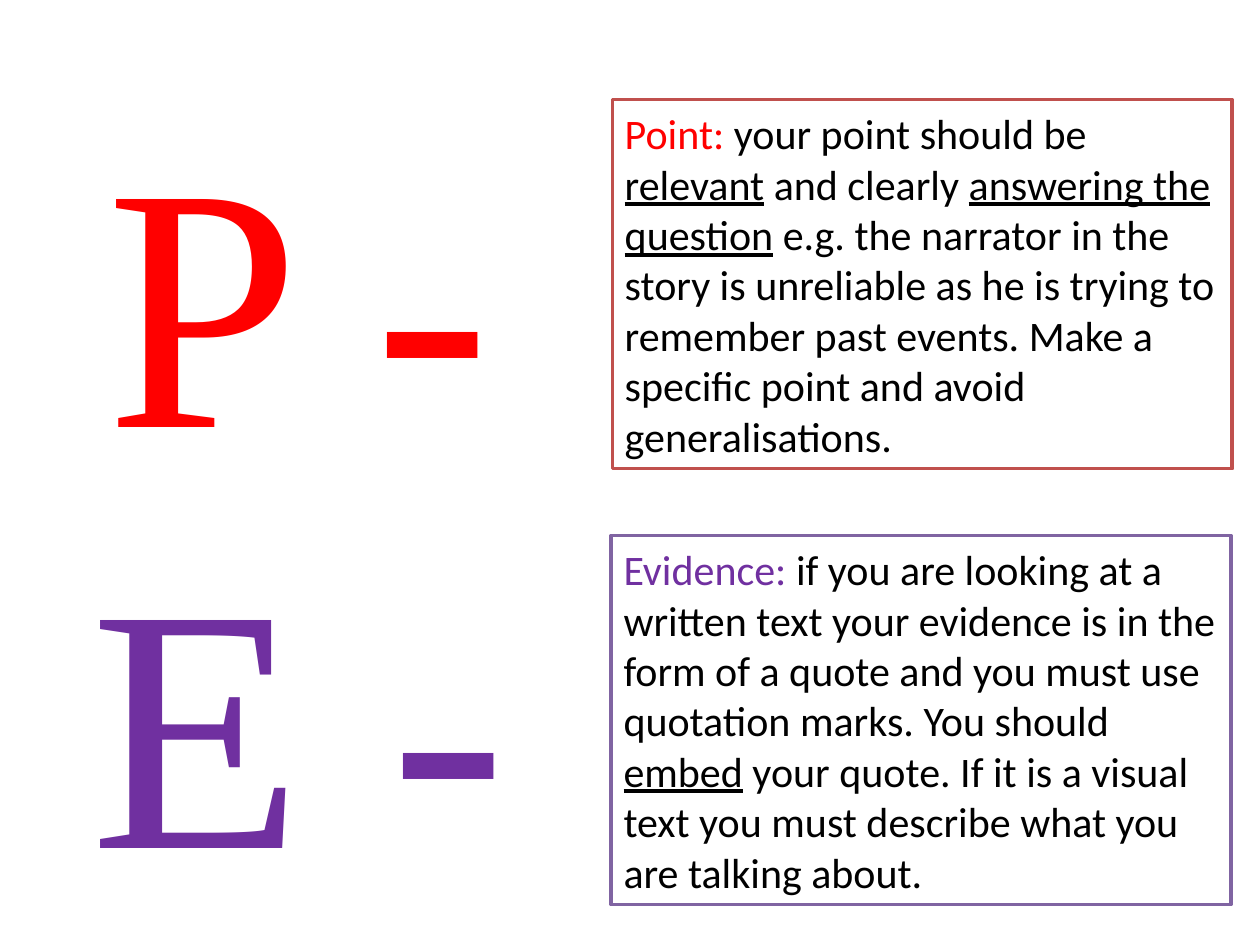
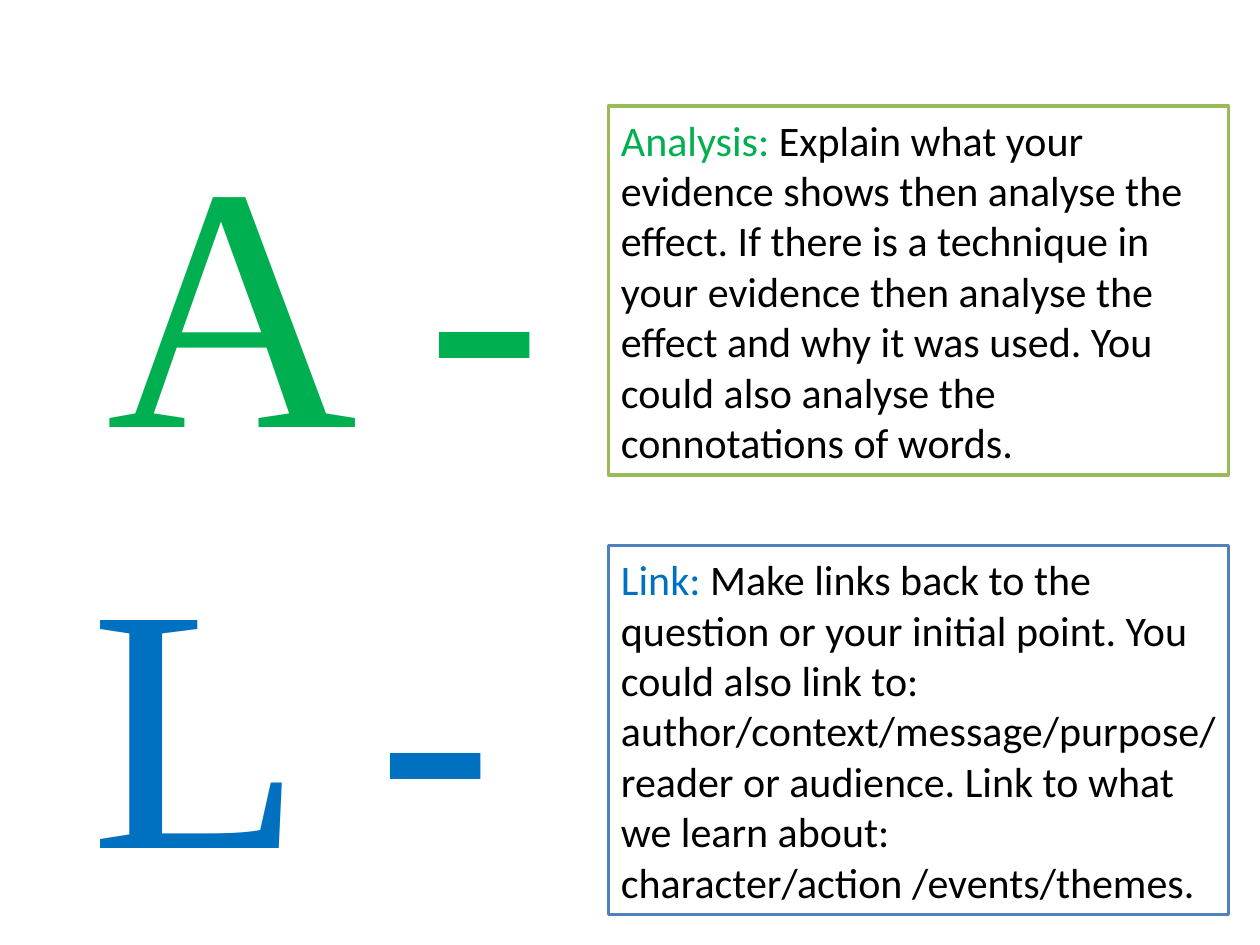
from pptx import Presentation
from pptx.dml.color import RGBColor
from pptx.enum.shapes import MSO_SHAPE
from pptx.enum.text import MSO_ANCHOR, MSO_AUTO_SIZE, PP_ALIGN
from pptx.util import Inches, Pt

RECT = MSO_SHAPE.RECTANGLE
GROW = MSO_AUTO_SIZE.SHAPE_TO_FIT_TEXT
MIDDLE = MSO_ANCHOR.MIDDLE
LEFT = PP_ALIGN.LEFT

BLACK = RGBColor(0x00, 0x00, 0x00)
WHITE = RGBColor(0xFF, 0xFF, 0xFF)
RED = RGBColor(0xFF, 0x00, 0x00)
PURPLE = RGBColor(0x70, 0x30, 0xA0)
GREEN = RGBColor(0x00, 0xB0, 0x50)
BLUE = RGBColor(0x00, 0x70, 0xC0)
RED_EDGE = RGBColor(0xC0, 0x50, 0x4D)
PURPLE_EDGE = RGBColor(0x80, 0x64, 0xA2)
GREEN_EDGE = RGBColor(0x9B, 0xBB, 0x59)
BLUE_EDGE = RGBColor(0x4F, 0x81, 0xBD)

# Two rows on each slide: the big letter on the left, its card on the right
LETTER_ROWS = [(0.75, 0.58), (0.62, 3.92)]
LETTER_H = 3.45
CARD_W, CARD_H = 4.92, 2.93

# Letter, its box width, card left and top, colour, edge, heading, text
# (underscores enclose underlined words)
SLIDES = [
    [("P -", 3.32, 4.86, 0.79, RED, RED_EDGE, "Point: ",
      "your point should be _relevant_ and clearly _answering the question_ "
      "e.g. the narrator in the story is unreliable as he is trying to "
      "remember past events. Make a specific point and avoid "
      "generalisations."),
     ("E -", 4.12, 4.85, 4.25, PURPLE, PURPLE_EDGE, "Evidence: ",
      "if you are looking at a written text your evidence is in the form of "
      "a quote and you must use quotation marks. You should _embed_ your "
      "quote. If it is a visual text you must describe what you are talking "
      "about.")],
    [("A -", 4.23, 4.83, 0.84, GREEN, GREEN_EDGE, "Analysis:",
      " Explain what your evidence shows then analyse the effect. If there "
      "is a technique in your evidence then analyse the effect and why it "
      "was used. You could also analyse the connotations of words."),
     ("L -", 4.03, 4.83, 4.33, BLUE, BLUE_EDGE, "Link: ",
      "Make links back to the question or your initial point. You could "
      "also link to: author/context/message/purpose/reader or audience. "
      "Link to what we learn about: character/action /events/themes.")],
]

prs = Presentation()
prs.slide_width, prs.slide_height = Inches(10), Inches(7.5)

for rows in SLIDES:
    s = prs.slides.add_slide(prs.slide_layouts[6])

    # Big letters
    for (x, y), (letter, w, _, _, color, *_) in zip(LETTER_ROWS, rows):
        sp = s.shapes.add_textbox(Inches(x), Inches(y), Inches(w), Inches(LETTER_H))
        tf = sp.text_frame
        tf.word_wrap = False
        tf.auto_size = GROW
        p = tf.paragraphs[0]
        p.text = letter
        p.font.name, p.font.size = "Times New Roman", Pt(199)
        p.font.color.rgb = color

    # Explanation cards
    for _, _, x, y, color, edge, heading, text in rows:
        sp = s.shapes.add_shape(RECT, Inches(x), Inches(y), Inches(CARD_W), Inches(CARD_H))
        sp.shadow.inherit = False
        sp.fill.solid()
        sp.fill.fore_color.rgb = WHITE
        sp.line.color.rgb = edge
        sp.line.width = Pt(2)
        tf = sp.text_frame
        tf.word_wrap = True
        tf.auto_size = GROW
        tf.vertical_anchor = MIDDLE
        p = tf.paragraphs[0]
        p.alignment = LEFT
        p.font.name, p.font.size = "Calibri", Pt(24)
        r = p.add_run()
        r.text = heading
        r.font.color.rgb = color
        for i, part in enumerate(text.split("_")):
            r = p.add_run()
            r.text = part
            r.font.color.rgb = BLACK
            if i % 2:
                r.font.underline = True

prs.save("out.pptx")
